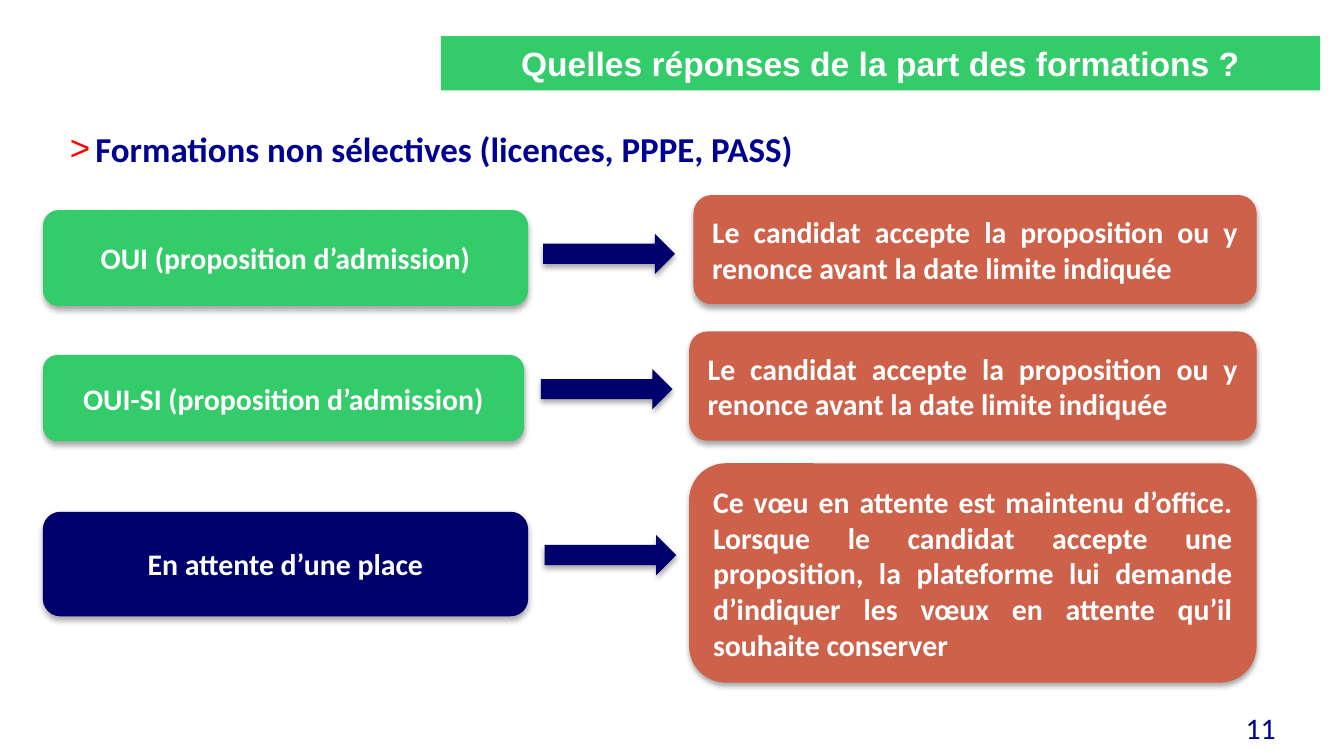
"""Build the slide on the answers given by non-selective courses."""
from dataclasses import dataclass

import lxml.etree
import pptx
import pptx.dml.color
import pptx.enum.shapes
import pptx.enum.text
import pptx.oxml
import pptx.oxml.ns
import pptx.util

Pt = pptx.util.Pt
Shape = pptx.enum.shapes.MSO_SHAPE
Align = pptx.enum.text.PP_ALIGN
Anchor = pptx.enum.text.MSO_ANCHOR


@dataclass(frozen=True)
class Theme:
    green: str = "34CB6A"
    navy: str = "00006D"
    brick: str = "CE614A"
    ink: str = "000091"
    white: str = "FFFFFF"
    red: str = "FF0000"
    body: float = 16
    head: float = 18.7
    title: float = 18


theme = Theme()
ns = pptx.oxml.ns.nsdecls("a")
shade = (
    f'<a:outerShdw {ns} blurRad="{Pt(3.1)}" dist="{Pt(1.8)}" dir="5400000" rotWithShape="0">'
    '<a:srgbClr val="000000"><a:alpha val="35000"/></a:srgbClr></a:outerShdw>'
)


def write(shape, text, size=theme.body, color=theme.white, font="Calibri",
          bold=True, align=Align.CENTER, anchor=Anchor.MIDDLE, bullet=None):
    frame = shape.text_frame
    frame.word_wrap = True
    frame.vertical_anchor = anchor
    para = frame.paragraphs[0]
    para.alignment = align
    if bullet:
        props = para._p.get_or_add_pPr()
        props.set("marL", str(Pt(13.7)))
        props.set("indent", str(Pt(-13.7)))
        for part in (
            f'<a:buClr {ns}><a:srgbClr val="{theme.red}"/></a:buClr>',
            f'<a:buFont {ns} typeface="Arial"/>',
            f'<a:buChar {ns} char="{bullet}"/>',
        ):
            props.append(pptx.oxml.parse_xml(part))
    run = para.add_run()
    run.text = text
    run.font.name = font
    run.font.size = Pt(size)
    run.font.bold = bold
    run.font.color.rgb = pptx.dml.color.RGBColor.from_string(color)


def draw(kind, place, fill, shadow=True):
    shape = slide.shapes.add_shape(kind, *map(Pt, place))
    shape.fill.solid()
    shape.fill.fore_color.rgb = pptx.dml.color.RGBColor.from_string(fill)
    shape.line.fill.background()
    shape.shadow.inherit = False
    if shadow:
        effect = shape._element.spPr.find(pptx.oxml.ns.qn("a:effectLst"))
        effect.append(pptx.oxml.parse_xml(shade))
    return shape


deck = pptx.Presentation()
deck.slide_width, deck.slide_height = Pt(720), Pt(405)
slide = deck.slides.add_slide(deck.slide_layouts[6])

title = draw(Shape.RECTANGLE, (236.2, 19.4, 471, 29), theme.green, shadow=False)
write(title, "Quelles réponses de la part des formations ?",
      size=theme.title, font="Arial")

head = slide.shapes.add_textbox(Pt(28), Pt(63.4), Pt(662.4), Pt(35.3))
frame = head.text_frame
frame.margin_left = frame.margin_right = Pt(9.4)
frame.margin_top = frame.margin_bottom = Pt(5)
write(head, "Formations non sélectives (licences, PPPE, PASS)", size=theme.head,
      color=theme.ink, align=Align.LEFT, anchor=Anchor.TOP, bullet=">")

accept = "Le candidat accepte la proposition ou y renonce avant la date limite indiquée"
wait = ("Ce vœu en attente est maintenu d’office. Lorsque le candidat accepte une "
        "proposition, la plateforme lui demande d’indiquer les vœux en attente "
        "qu’il souhaite conserver")
rows = [
    ("OUI (proposition d’admission)", theme.green, (23, 112.5, 260, 51.4),
     (291, 125.2), accept, (371.5, 104.5, 301.7, 58.5)),
    ("OUI-SI (proposition d’admission)", theme.green, (23, 190.2, 257.8, 46.2),
     (289.7, 197.7), accept, (369.2, 177.6, 304, 58.5)),
    ("En attente d’une place", theme.navy, (23, 274.2, 260, 56),
     (291.7, 286.6), wait, (369.2, 248.2, 304, 117.5)),
]
for answer, fill, left, arrow, result, right in rows:
    write(draw(Shape.ROUNDED_RECTANGLE, left, fill), answer)
    draw(Shape.RIGHT_ARROW, (*arrow, 70.6, 21.6), theme.navy)
    write(draw(Shape.ROUNDED_RECTANGLE, right, theme.brick), result, align=Align.JUSTIFY)

number = slide.shapes.add_textbox(Pt(598.3), Pt(376.6), Pt(92.2), Pt(28))
write(number, "11", color=theme.ink, bold=False, align=Align.RIGHT, anchor=Anchor.TOP)

deck.save("out.pptx")
